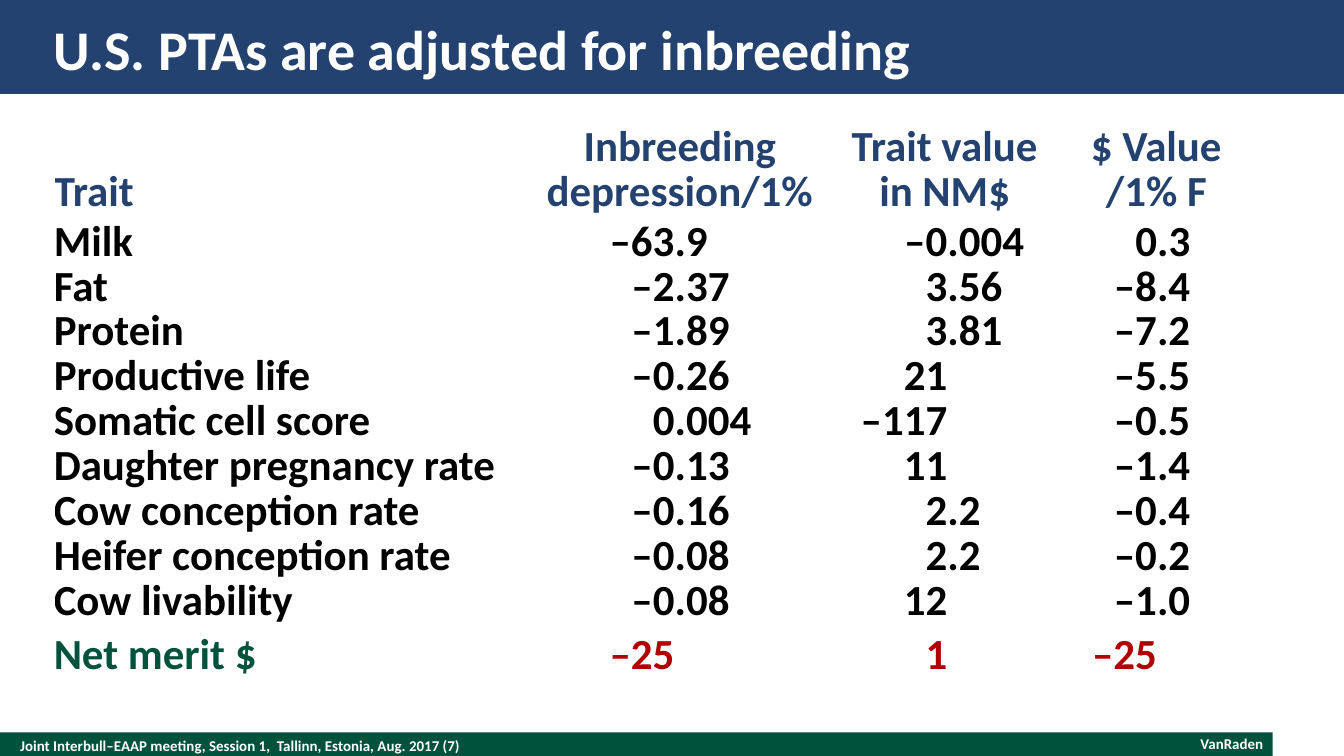
import pptx
import pptx.dml.color
import pptx.enum.shapes
import pptx.enum.text
import pptx.oxml
import pptx.oxml.ns
import pptx.util

Inches = pptx.util.Inches
Pt = pptx.util.Pt
RGBColor = pptx.dml.color.RGBColor
ALIGN = pptx.enum.text.PP_ALIGN
ANCHOR = pptx.enum.text.MSO_ANCHOR

NAVY = RGBColor(0x24, 0x42, 0x70)
GREEN = RGBColor(0x00, 0x52, 0x3C)
RED = RGBColor(0xB0, 0x00, 0x00)
BLACK = RGBColor(0, 0, 0)
WHITE = RGBColor(0xFF, 0xFF, 0xFF)

SLIDE_WIDTH = Inches(10)
SLIDE_HEIGHT = SLIDE_WIDTH * 9 // 16

COLUMN_WIDTHS = [3.62, 2.08, 1.76, 1.49]
DECIMAL_STOPS = [None, 1, 0.95, 0.75]
HEADINGS = ["Trait", "Inbreeding depression/1%", "Trait value\nin NM$", "$ Value\n/1% F"]
TRAITS = [
    ("Milk", "–63.9", "–0.004", "0.3"),
    ("Fat", "–2.37", "3.56", "–8.4"),
    ("Protein", "–1.89", "3.81", "–7.2"),
    ("Productive life", "–0.26", "21", "–5.5"),
    ("Somatic cell score", "0.004", "–117", "–0.5"),
    ("Daughter pregnancy rate", "–0.13", "11", "–1.4"),
    ("Cow conception rate", "–0.16", "2.2", "–0.4"),
    ("Heifer conception rate", "–0.08", "2.2", "–0.2"),
    ("Cow livability", "–0.08", "12", "–1.0"),
]
NET_MERIT = ("Net merit $", "–25", "1", "–25")


def apply_format(target, values):
    for name, value in values.items():
        setattr(target, name, value)


def write_run(paragraph, text, size, color):
    run = paragraph.add_run()
    run.text = text
    apply_format(run.font, {"name": "Calibri", "size": Pt(size), "bold": True})
    run.font.color.rgb = color


def add_band(slide, left, top, width, height, color):
    band = slide.shapes.add_shape(
        pptx.enum.shapes.MSO_SHAPE.RECTANGLE,
        Inches(left), Inches(top), Inches(width), Inches(height))
    band.shadow.inherit = False
    band.fill.solid()
    band.fill.fore_color.rgb = color
    band.line.fill.background()


def add_label(slide, left, top, width, height, text, size, alignment=ALIGN.LEFT):
    label = slide.shapes.add_textbox(
        Inches(left), Inches(top), Inches(width), Inches(height))
    frame = label.text_frame
    apply_format(frame, {
        "word_wrap": True, "vertical_anchor": ANCHOR.MIDDLE,
        "margin_left": 0, "margin_right": 0, "margin_top": 0, "margin_bottom": 0})
    paragraph = frame.paragraphs[0]
    paragraph.alignment = alignment
    write_run(paragraph, text, size, WHITE)


def add_decimal_stop(paragraph, position):
    namespace = pptx.oxml.ns.nsdecls("a")
    paragraph._p.get_or_add_pPr().append(pptx.oxml.parse_xml(
        f'<a:tabLst {namespace}><a:tab pos="{Inches(position)}" algn="dec"/></a:tabLst>'))


def fill_cell(cell, text, color, anchor=ANCHOR.TOP, alignment=ALIGN.LEFT,
              left=0, top=0, stop=None):
    cell.fill.background()
    apply_format(cell, {
        "vertical_anchor": anchor, "margin_left": Inches(left),
        "margin_top": Inches(top), "margin_right": 0, "margin_bottom": 0})
    frame = cell.text_frame
    for index, line in enumerate(text.split("\n")):
        paragraph = frame.add_paragraph() if index else frame.paragraphs[0]
        apply_format(paragraph, {"alignment": alignment, "line_spacing": Pt(24)})
        if stop:
            add_decimal_stop(paragraph, stop)
            line = "\t" + line
        write_run(paragraph, line, 23, color)


def add_trait_table(slide):
    row_heights = [0.72, 0.34] + [0.3] * (len(TRAITS) - 1) + [0.38]
    table = slide.shapes.add_table(
        len(row_heights), len(COLUMN_WIDTHS), Inches(0.4), Inches(0.9),
        Inches(sum(COLUMN_WIDTHS)), Inches(sum(row_heights))).table
    apply_format(table, {"first_row": False, "horz_banding": False})
    for column, width in zip(table.columns, COLUMN_WIDTHS):
        column.width = Inches(width)
    for row, height in zip(table.rows, row_heights):
        row.height = Inches(height)

    for column, heading in enumerate(HEADINGS):
        fill_cell(table.cell(0, column), heading, NAVY, ANCHOR.BOTTOM,
                  ALIGN.CENTER if column else ALIGN.LEFT,
                  left=0.1 if column == 2 else 0)

    for row, values in enumerate(TRAITS + [NET_MERIT], start=1):
        is_total = values is NET_MERIT
        top = 0.07 if is_total else 0.04 if row == 1 else 0
        for column, value in enumerate(values):
            color = BLACK
            if is_total:
                color = RED if column else GREEN
            fill_cell(table.cell(row, column), value, color,
                      top=top, stop=DECIMAL_STOPS[column])


def main():
    deck = pptx.Presentation()
    apply_format(deck, {"slide_width": SLIDE_WIDTH, "slide_height": SLIDE_HEIGHT})
    slide = deck.slides.add_slide(deck.slide_layouts[6])

    add_band(slide, 0, 5.45, 9.47, 0.2, GREEN)
    add_band(slide, 0, 0, 10, 0.7, NAVY)
    add_label(slide, 0.15, 5.45, 6.5, 0.2,
              "Joint Interbull–EAAP meeting, Session 1,  Tallinn, Estonia, Aug. 2017 (7)", 8)
    add_label(slide, 7.2, 5.47, 2.2, 0.13, "VanRaden", 8, ALIGN.RIGHT)
    add_label(slide, 0.4, 0.1, 9.2, 0.52, "U.S. PTAs are adjusted for inbreeding", 30)
    add_trait_table(slide)
    deck.save("out.pptx")


if __name__ == "__main__":
    main()
